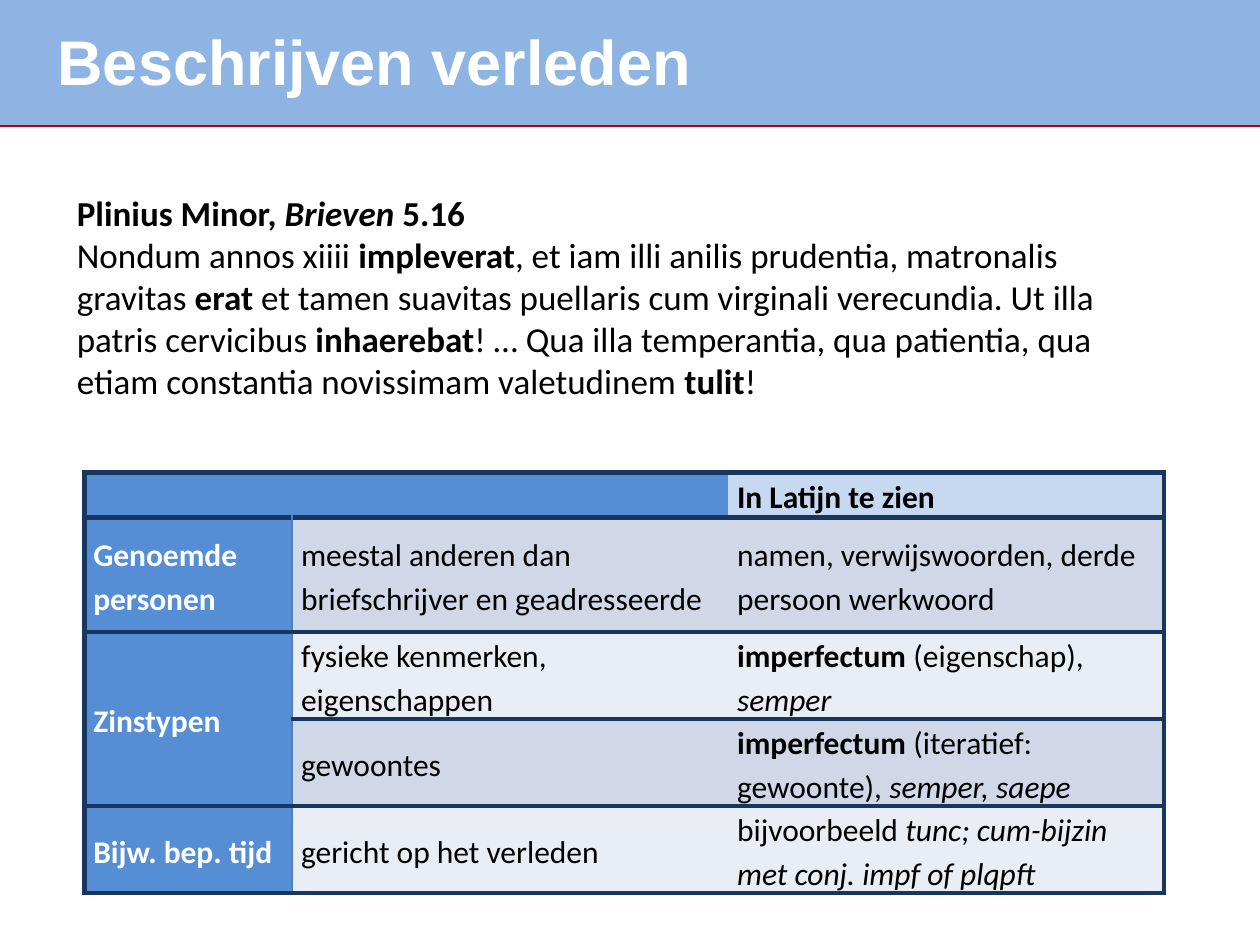
from lxml.etree import SubElement
from pptx import Presentation
from pptx.dml.color import RGBColor
from pptx.enum.shapes import MSO_CONNECTOR, MSO_SHAPE
from pptx.enum.text import MSO_ANCHOR
from pptx.oxml import parse_xml
from pptx.oxml.ns import nsdecls, qn
from pptx.util import Cm, Pt

WHITE = RGBColor(0xFF, 0xFF, 0xFF)
BLACK = RGBColor(0x00, 0x00, 0x00)
RED = RGBColor(0xC0, 0x00, 0x00)
BAND_BLUE = RGBColor(0x8E, 0xB4, 0xE3)
LABEL_BLUE = RGBColor(0x55, 0x8E, 0xD5)
HEADER_BLUE = RGBColor(0xC6, 0xD9, 0xF1)
ROW_DARK = RGBColor(0xD0, 0xD8, 0xE8)
ROW_LIGHT = RGBColor(0xE9, 0xED, 0xF4)
BORDER_NAVY = RGBColor(0x17, 0x37, 0x5E)
BORDER_BLUE = RGBColor(0x4F, 0x81, 0xBD)

TITLE = "Beschrijven verleden"
PASSAGE = [
    [("Plinius Minor, ", "b"), ("Brieven ", "bi"), ("5.16", "b")],
    [
        ("Nondum annos xiiii ", ""), ("impleverat", "b"),
        (", et iam illi anilis prudentia, matronalis gravitas ", ""), ("erat", "b"),
        (" et tamen suavitas puellaris cum virginali verecundia. Ut illa patris cervicibus ", ""),
        ("inhaerebat", "b"),
        ("! … Qua illa temperantia, qua patientia, qua etiam constantia novissimam valetudinem ", ""),
        ("tulit", "b"), ("!", ""),
    ],
]
TABLE_ROWS = [
    [[], [], [("In Latijn te zien", "b")]],
    [[("Genoemde personen", "b")],
     [("meestal anderen dan briefschrijver en geadresseerde", "")],
     [("namen, verwijswoorden, derde persoon werkwoord", "")]],
    [[("Zinstypen", "b")],
     [("fysieke kenmerken, eigenschappen", "")],
     [("imperfectum", "b"), (" (eigenschap), ", ""), ("semper", "i")]],
    [[], [("gewoontes", "")],
     [("imperfectum", "b"), (" (iteratief: gewoonte), ", ""), ("semper, saepe", "i")]],
    [[("Bijw. bep. tijd", "b")],
     [("gericht op het verleden", "")],
     [("bijvoorbeeld ", ""), ("tunc; cum-bijzin met conj. impf of plqpft", "i")]],
]
COLUMN_WIDTHS = [Cm(4.19), Cm(8.79), Cm(8.79)]
ROW_HEIGHTS = [Cm(0.9), Cm(2.31), Cm(1.75), Cm(1.75), Cm(1.75)]


def add_runs(paragraph, pieces, size, color, font_name="Calibri"):
    """Add styled pieces of text, where b is bold and i is italic."""
    for text, style in pieces:
        run = paragraph.add_run()
        run.text = text
        run.font.name = font_name
        run.font.size = Pt(size)
        run.font.color.rgb = color
        run.font.bold = "b" in style
        run.font.italic = "i" in style


def add_text_box(slide, left, top, width, height):
    """Return the text frame of a new wrapping text box."""
    text_frame = slide.shapes.add_textbox(left, top, width, height).text_frame
    text_frame.word_wrap = True
    return text_frame


def add_title_band(slide, left, top, width, height):
    """Draw the title on its band, with the red rule along the bottom."""
    bottom = top + height
    rule = slide.shapes.add_connector(
        MSO_CONNECTOR.STRAIGHT, left, bottom, left + width, bottom)
    rule.line.color.rgb = RED
    rule.line.width = Pt(2)
    SubElement(rule._element.spPr, qn("a:effectLst"))

    band = slide.shapes.add_shape(MSO_SHAPE.RECTANGLE, left, top, width, height)
    band.shadow.inherit = False
    band.fill.solid()
    band.fill.fore_color.rgb = BAND_BLUE
    band.line.fill.background()

    text_frame = add_text_box(
        slide, left + Cm(0.91), top + Cm(0.33), width - Cm(2.2), Cm(1.8))
    add_runs(text_frame.paragraphs[0], [(TITLE, "b")], 36, WHITE, "Arial")


def add_passage(slide, left, top, width, height):
    """Write the Latin passage under its source reference."""
    text_frame = add_text_box(slide, left, top, width, height)
    for index, pieces in enumerate(PASSAGE):
        paragraph = text_frame.add_paragraph() if index else text_frame.paragraphs[0]
        add_runs(paragraph, pieces, 20, BLACK)


def set_borders(cell, borders):
    """Set the left, right, top and bottom borders as (color, points) or None."""
    properties = cell._tc.get_or_add_tcPr()
    for index, (side, border) in enumerate(zip("LRTB", borders)):
        if border:
            color, points = border
            width = Pt(points)
            fill = f'<a:solidFill><a:srgbClr val="{color}"/></a:solidFill>'
        else:
            width, fill = 0, "<a:noFill/>"
        properties.insert(index, parse_xml(
            f'<a:ln{side} {nsdecls("a")} w="{width}">{fill}</a:ln{side}>'))


def cell_fill(row, column):
    """Return the fill of a cell from its place in the table."""
    if column == 0 or (row, column) == (0, 1):
        return LABEL_BLUE
    if row == 0:
        return HEADER_BLUE
    return ROW_DARK if row % 2 else ROW_LIGHT


def cell_borders(row, column):
    """Return the four borders of a cell from its place in the table."""
    navy, thin = (BORDER_NAVY, 3), (BORDER_BLUE, 1)
    divider = thin if row else None
    left = [navy, divider, None][column]
    right = [divider, None, navy][column]
    top = None if (row, column) == (3, 0) else navy
    bottom = None if (row, column) == (2, 0) else navy
    return left, right, top, bottom


def add_overview_table(slide, left, top):
    """Place the table of sentence features and their Latin signs."""
    table = slide.shapes.add_table(
        len(ROW_HEIGHTS), len(COLUMN_WIDTHS), left, top,
        sum(COLUMN_WIDTHS), sum(ROW_HEIGHTS)).table
    for column, width in zip(table.columns, COLUMN_WIDTHS):
        column.width = width
    for row, height in zip(table.rows, ROW_HEIGHTS):
        row.height = height
    for row, contents in enumerate(TABLE_ROWS):
        for column, pieces in enumerate(contents):
            cell = table.cell(row, column)
            cell.fill.solid()
            cell.fill.fore_color.rgb = cell_fill(row, column)
            set_borders(cell, cell_borders(row, column))
            cell.vertical_anchor = MSO_ANCHOR.MIDDLE
            cell.margin_left = cell.margin_right = Cm(0.18)
            cell.margin_top = cell.margin_bottom = 0
            paragraph = cell.text_frame.paragraphs[0]
            paragraph.line_spacing = 1.15
            add_runs(paragraph, pieces, 18, BLACK if column else WHITE)
    table.cell(0, 0).merge(table.cell(0, 1))
    table.cell(2, 0).merge(table.cell(3, 0))


def main():
    """Build and save the slide."""
    presentation = Presentation()
    presentation.slide_width = Cm(25.4)
    presentation.slide_height = Cm(19.05)
    slide = presentation.slides.add_slide(presentation.slide_layouts[6])
    add_title_band(slide, 0, 0, presentation.slide_width, Cm(2.52))
    add_passage(slide, Cm(1.3), Cm(3.73), Cm(22.2), Cm(4.52))
    add_overview_table(slide, Cm(1.7), Cm(9.53))
    presentation.save("out.pptx")


if __name__ == "__main__":
    main()
